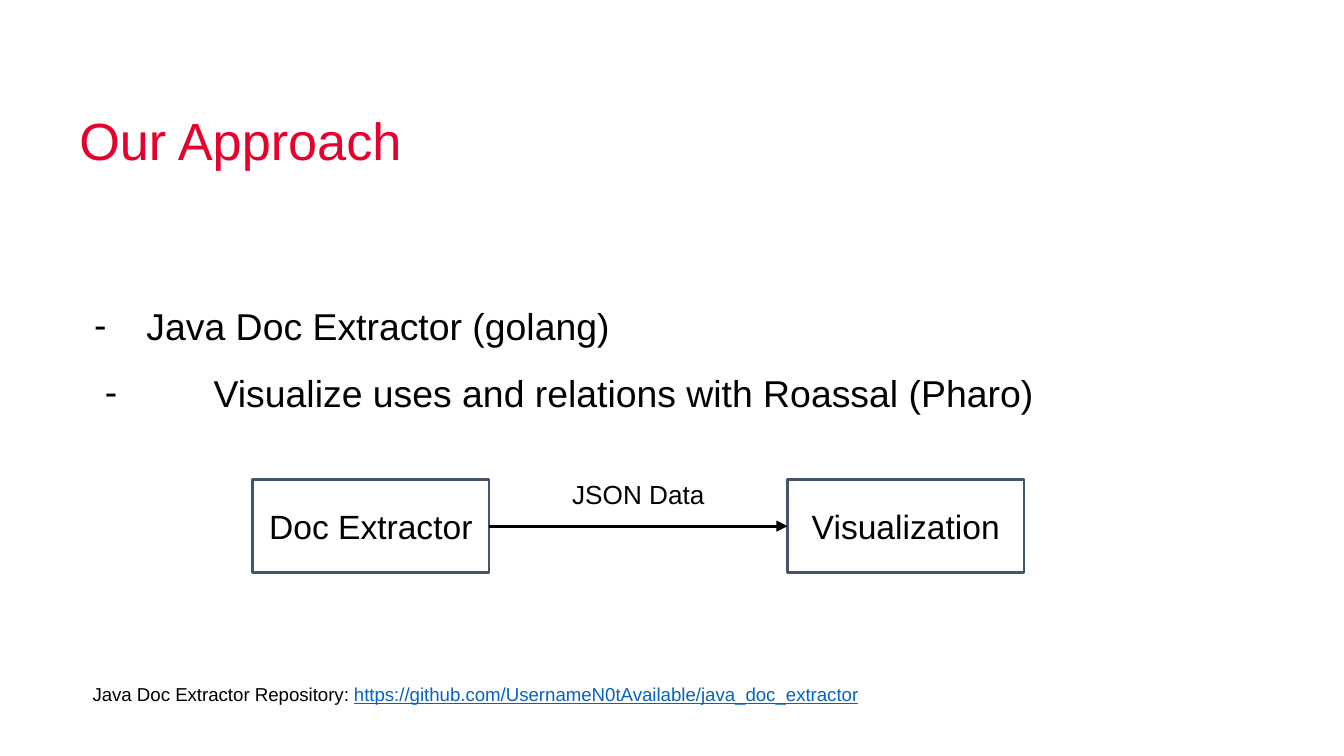
from pptx import Presentation
from pptx.dml.color import RGBColor
from pptx.enum.shapes import MSO_CONNECTOR, MSO_SHAPE
from pptx.enum.text import MSO_ANCHOR, MSO_AUTO_SIZE, PP_ALIGN
from pptx.oxml.ns import qn
from pptx.util import Emu, Pt
from lxml.etree import SubElement

PX = 9144  # EMU per px, 100 px to the inch
RED = RGBColor(0xE6, 0x00, 0x2E)
BLACK = RGBColor(0, 0, 0)
WHITE = RGBColor(0xFF, 0xFF, 0xFF)
SLATE = RGBColor(0x44, 0x54, 0x6A)
LINK = RGBColor(0x05, 0x63, 0xC1)
TOP, MIDDLE = MSO_ANCHOR.TOP, MSO_ANCHOR.MIDDLE
LEFT, CENTER = PP_ALIGN.LEFT, PP_ALIGN.CENTER
FIT, FIXED = MSO_AUTO_SIZE.SHAPE_TO_FIT_TEXT, MSO_AUTO_SIZE.NONE


def px(*lengths):
    return [Emu(n * PX) for n in lengths]


def apply(target, **values):
    for name, value in values.items():
        setattr(target, name, value)


class SlideBuilder:
    font = "Arial"
    line_width = Pt(1.5)

    def __init__(self, slide):
        self.s = slide

    def frame(self, sp, inset, anchor=TOP, auto_size=FIXED):
        tf = sp.text_frame
        margin, = px(inset)
        apply(tf, word_wrap=True, auto_size=auto_size, vertical_anchor=anchor,
              margin_left=margin, margin_top=margin,
              margin_right=margin, margin_bottom=margin)
        return tf

    def run(self, p, text, size, color=BLACK, **values):
        r = p.add_run()
        r.text = text
        apply(r.font, name=self.font, size=Pt(size), **values)
        r.font.color.rgb = color

    def title(self, text, *box):
        sp = self.s.shapes.title
        apply(sp, **dict(zip(("left", "top", "width", "height"), px(*box))))
        p = self.frame(sp, 0, auto_size=FIT).paragraphs[0]
        apply(p, alignment=LEFT, line_spacing=1.14)
        self.run(p, text, 28, RED)

    def bullets(self, items, *box):
        """Each item is its text, the text indent and the dash position in px."""
        tf = self.frame(self.s.shapes.add_textbox(*px(*box)), 0)
        for i, (text, indent, dash) in enumerate(items):
            p = tf.add_paragraph() if i else tf.paragraphs[0]
            pPr = p._p.get_or_add_pPr()
            pPr.set("marL", str(indent * PX))
            pPr.set("indent", str((dash - indent) * PX))
            SubElement(pPr, qn("a:buFont"), typeface=self.font)
            SubElement(pPr, qn("a:buChar"), char="-")
            p.line_spacing = 1.5
            self.run(p, text, 20)

    def box(self, text, *box):
        sp = self.s.shapes.add_shape(MSO_SHAPE.RECTANGLE, *px(*box))
        sp.shadow.inherit = False
        sp.fill.solid()
        sp.fill.fore_color.rgb = WHITE
        sp.line.color.rgb = SLATE
        sp.line.width = self.line_width
        p = self.frame(sp, 10, MIDDLE).paragraphs[0]
        p.alignment = CENTER
        self.run(p, text, 18)
        return sp

    def arrow(self, start, end):
        """Join the right side of one box to the left side of another."""
        c = self.s.shapes.add_connector(MSO_CONNECTOR.STRAIGHT, 0, 0, 0, 0)
        c.begin_connect(start, 3)
        c.end_connect(end, 1)
        c.line.color.rgb = BLACK
        c.line.width = self.line_width
        SubElement(c.line._get_or_add_ln(), qn("a:tailEnd"), type="triangle")
        SubElement(c._element.spPr, qn("a:effectLst"))

    def label(self, text, size, *box, align=LEFT, link=None):
        sp = self.s.shapes.add_textbox(*px(*box))
        p = self.frame(sp, 10, auto_size=FIT).paragraphs[0]
        p.alignment = align
        self.run(p, text, size)
        if link:
            self.run(p, link, size, LINK, underline=True)


def main():
    prs = Presentation()
    prs.slide_width, = px(1000)
    prs.slide_height = prs.slide_width * 9 // 16
    b = SlideBuilder(prs.slides.add_slide(prs.slide_layouts[5]))

    b.title("Our Approach", 59, 74, 768, 47)
    b.bullets([("Java Doc Extractor (golang)", 50, 11),
               ("Visualize uses and relations with Roassal (Pharo)", 100, 19)],
              59, 209, 924, 312)
    extractor, visualization = [
        b.box(text, left, 357, 176, 69)
        for text, left in (("Doc Extractor", 188), ("Visualization", 586))]
    b.arrow(extractor, visualization)
    b.label("JSON Data", 14, 400, 346, 150, 44, align=CENTER)
    b.label("Java Doc Extractor Repository: ", 10, 59, 500, 939, 37,
            link="https://github.com/UsernameN0tAvailable/java_doc_extractor")

    prs.save("out.pptx")


if __name__ == "__main__":
    main()
